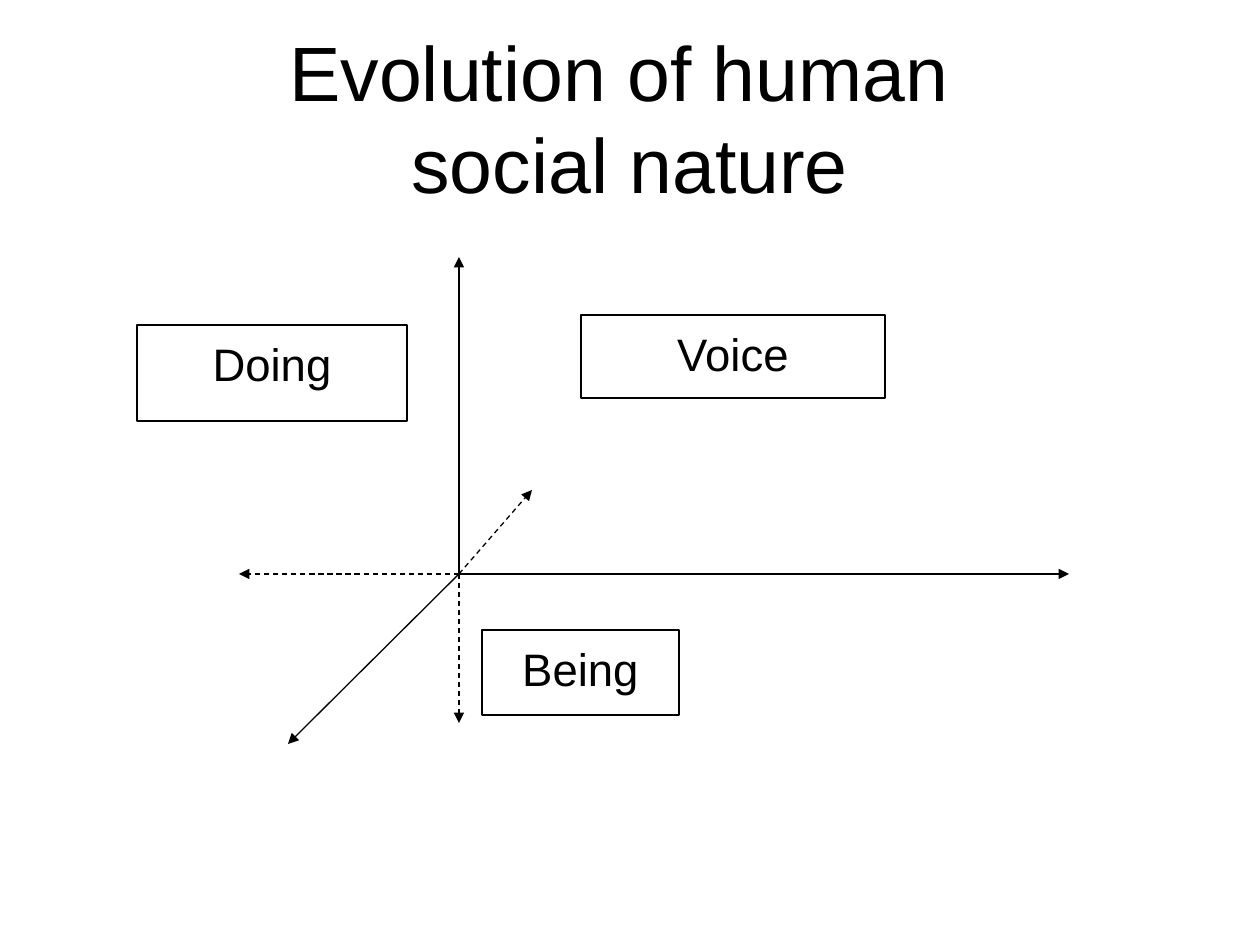
import pptx
import pptx.util
import pptx.dml.color
import pptx.enum.dml
import pptx.enum.shapes
import pptx.enum.text
import pptx.oxml.ns
from lxml import etree

BLACK = pptx.dml.color.RGBColor(0, 0, 0)
WHITE = pptx.dml.color.RGBColor(255, 255, 255)
PX = 914400 // 126


class Deck:
    font = "Arial"
    line_width = pptx.util.Pt(0.75)

    def __init__(self, width, height):
        self.prs = pptx.Presentation()
        self.prs.slide_width = width * PX
        self.prs.slide_height = height * PX
        self.s = self.prs.slides.add_slide(self.prs.slide_layouts[5])
        self.s.background.fill.solid()
        self.s.background.fill.fore_color.rgb = WHITE

    def set_text(self, tf, text, size, anchor):
        tf.text = text
        tf.word_wrap = True
        tf.auto_size = pptx.enum.text.MSO_AUTO_SIZE.NONE
        tf.vertical_anchor = anchor
        p = tf.paragraphs[0]
        p.alignment = pptx.enum.text.PP_ALIGN.CENTER
        for r in p.runs:
            r.font.name = self.font
            r.font.size = pptx.util.Pt(size)
            r.font.color.rgb = BLACK

    def outline(self, line):
        line.color.rgb = BLACK
        line.width = self.line_width

    def title(self, text, x, y, w, h):
        sp = self.s.shapes.title
        sp.left, sp.top, sp.width, sp.height = (v * PX for v in (x, y, w, h))
        self.set_text(sp.text_frame, text, 44, pptx.enum.text.MSO_ANCHOR.MIDDLE)

    def arrow(self, start, end, dashed):
        sp = self.s.shapes.add_connector(
            pptx.enum.shapes.MSO_CONNECTOR.STRAIGHT,
            *(v * PX for v in start + end))
        self.outline(sp.line)
        if dashed:
            sp.line.dash_style = pptx.enum.dml.MSO_LINE.DASH
        qn = pptx.oxml.ns.qn
        props = sp._element.spPr
        etree.SubElement(props.find(qn("a:ln")), qn("a:tailEnd"), type="triangle")
        etree.SubElement(props, qn("a:effectLst"))

    def box(self, text, x, y, w, h, fill=None):
        sp = self.s.shapes.add_shape(
            pptx.enum.shapes.MSO_SHAPE.RECTANGLE,
            *(v * PX for v in (x, y, w, h)))
        sp.shadow.inherit = False
        if fill is None:
            sp.fill.background()
        else:
            sp.fill.solid()
            sp.fill.fore_color.rgb = fill
        self.outline(sp.line)
        sp.text_frame.margin_top = 11 * PX
        self.set_text(sp.text_frame, text, 26, pptx.enum.text.MSO_ANCHOR.TOP)


def main():
    deck = Deck(1260, 945)
    deck.title("Evolution of human \vsocial nature", 63, 38, 1134, 158)

    origin = (459, 574)
    solid_ends = [(459, 257), (288, 744), (1069, 574)]
    dashed_ends = [(459, 723), (239, 574), (532, 490)]
    for ends, dashed in ((solid_ends, False), (dashed_ends, True)):
        for end in ends:
            deck.arrow(origin, end, dashed)

    deck.box("Doing", 137, 325, 270, 96)
    deck.box("Voice", 581, 315, 304, 83, WHITE)
    deck.box("Being", 482, 630, 197, 85)

    deck.prs.save("out.pptx")


if __name__ == "__main__":
    main()
